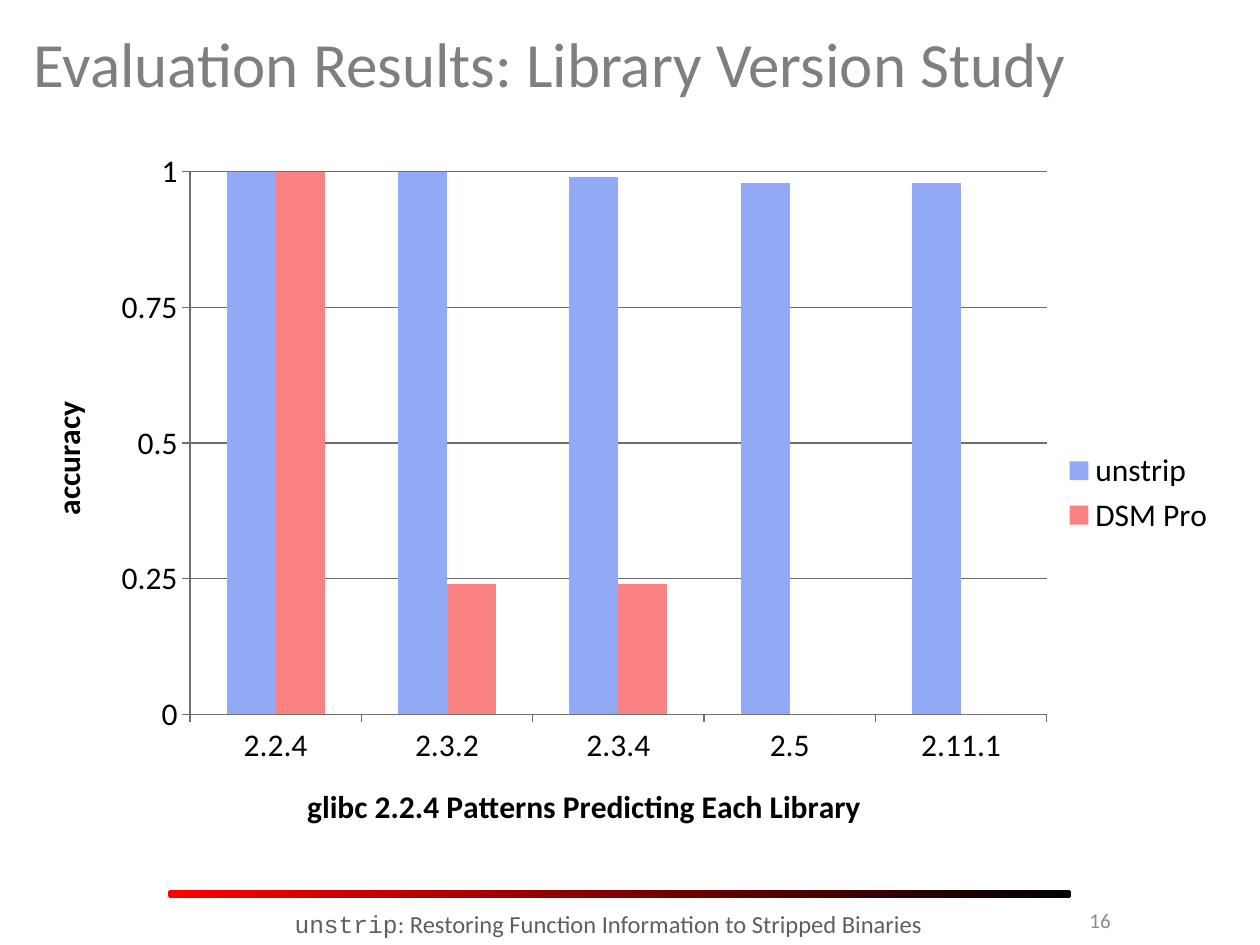
import pptx
import pptx.chart.data
import pptx.dml.color
import pptx.enum.chart
import pptx.enum.shapes
import pptx.enum.text
import pptx.oxml
import pptx.util

SCALE = 914400 / 126
FONT = "Calibri"
COLORS = {
    "title": "7F7F7F", "foot": "5F5F5F", "page": "8C8C8C",
    "text": "000000", "grid": "6E6E6E",
    "unstrip": "92AAF6", "rival": "FA8282",
    "start": "FF0000", "end": "000000",
}
VERSIONS = ["2.2.4", "2.3.2", "2.3.4", "2.5", "2.11.1"]
SERIES = [
    ("unstrip", [1, 1, 0.99, 0.98, 0.98], "unstrip"),
    ("DSM Pro", [1, 0.24, 0.24, 0, 0], "rival"),
]
ALIGN = pptx.enum.text.PP_ALIGN
ANCHOR = pptx.enum.text.MSO_ANCHOR


def px(*sizes):
    return [pptx.util.Emu(round(size * SCALE)) for size in sizes]


def rgb(name):
    return pptx.dml.color.RGBColor.from_string(COLORS[name])


def style(font, size, color, bold=False):
    font.name = FONT
    font.size = pptx.util.Pt(size)
    font.bold = bold
    font.color.rgb = rgb(color)


def add_text(slide, box, text, size, color, align, anchor):
    frame = slide.shapes.add_textbox(*px(*box)).text_frame
    frame.word_wrap = True
    frame.vertical_anchor = anchor
    para = frame.paragraphs[0]
    para.text = text
    para.alignment = align
    style(para.font, size, color)
    return para


def add_foot(slide):
    para = add_text(slide, (262, 903, 693, 42), "", 14, "foot",
                    ALIGN.CENTER, ANCHOR.TOP)
    for text, face in [
        ("unstrip", "Courier New"),
        (": Restoring Function Information to Stripped Binaries", FONT),
    ]:
        run = para.add_run()
        run.text = text
        run.font.name = face
        run.font.size = pptx.util.Pt(14)
        run.font.color.rgb = rgb("foot")


def add_bar(slide):
    kind = pptx.enum.shapes.MSO_SHAPE.ROUNDED_RECTANGLE
    bar = slide.shapes.add_shape(kind, *px(168, 890, 903, 8))
    bar.adjustments[0] = 0.33
    bar.shadow.inherit = False
    bar.line.fill.background()
    bar.fill.gradient()
    bar.fill.gradient_angle = 0
    for stop, name in zip(bar.fill.gradient_stops, ("start", "end")):
        stop.color.rgb = rgb(name)


def set_axis(axis, title):
    para = axis.axis_title.text_frame.paragraphs[0]
    para.text = title
    style(para.font, 18, "text", bold=True)
    axis.major_tick_mark = pptx.enum.chart.XL_TICK_MARK.OUTSIDE
    axis.format.line.color.rgb = rgb("grid")
    axis.format.line.width = pptx.util.Pt(0.75)


def place_plot(chart, **parts):
    """Fix the inner plot area as fractions of the chart."""
    area = chart.plots[0]._element.getparent()
    for old in area.findall(pptx.oxml.ns.qn("c:layout")):
        area.remove(old)
    sizes = "".join(f'<c:{key} val="{val}"/>' for key, val in parts.items())
    area.insert(0, pptx.oxml.parse_xml(
        f'<c:layout {pptx.oxml.ns.nsdecls("c")}><c:manualLayout>'
        '<c:layoutTarget val="inner"/><c:xMode val="edge"/>'
        f'<c:yMode val="edge"/>{sizes}</c:manualLayout></c:layout>'))


def add_chart(slide):
    data = pptx.chart.data.CategoryChartData()
    data.categories = VERSIONS
    for name, values, _ in SERIES:
        data.add_series(name, values)
    kind = pptx.enum.chart.XL_CHART_TYPE.COLUMN_CLUSTERED
    chart = slide.shapes.add_chart(kind, *px(21, 136, 1207, 714), data).chart
    style(chart.font, 18, "text")
    chart.has_title = False
    chart.has_legend = True
    chart.legend.position = pptx.enum.chart.XL_LEGEND_POSITION.RIGHT
    chart.legend.include_in_layout = False

    plot = chart.plots[0]
    plot.gap_width = 150
    plot.overlap = 0
    plot.vary_by_categories = False
    for series, (_, _, color) in zip(plot.series, SERIES):
        series.format.fill.solid()
        series.format.fill.fore_color.rgb = rgb(color)

    set_axis(chart.category_axis, "glibc 2.2.4 Patterns Predicting Each Library")
    axis = chart.value_axis
    set_axis(axis, "accuracy")
    axis.minimum_scale = 0
    axis.maximum_scale = 1
    axis.major_unit = 0.25
    axis.has_major_gridlines = True
    axis.major_gridlines.format.line.color.rgb = rgb("grid")
    axis.major_gridlines.format.line.width = pptx.util.Pt(0.75)
    place_plot(chart, x=0.14, y=0.05, w=0.71, h=0.76)


def main():
    deck = pptx.Presentation()
    deck.slide_width, deck.slide_height = px(1260, 945)
    slide = deck.slides.add_slide(deck.slide_layouts[6])
    add_bar(slide)
    add_text(slide, (21, 10, 1218, 105),
             "Evaluation Results: Library Version Study",
             36, "title", ALIGN.LEFT, ANCHOR.MIDDLE)
    add_chart(slide)
    add_text(slide, (955, 895, 168, 50), "16", 12, "page",
             ALIGN.RIGHT, ANCHOR.MIDDLE)
    add_foot(slide)
    deck.save("out.pptx")


if __name__ == "__main__":
    main()
